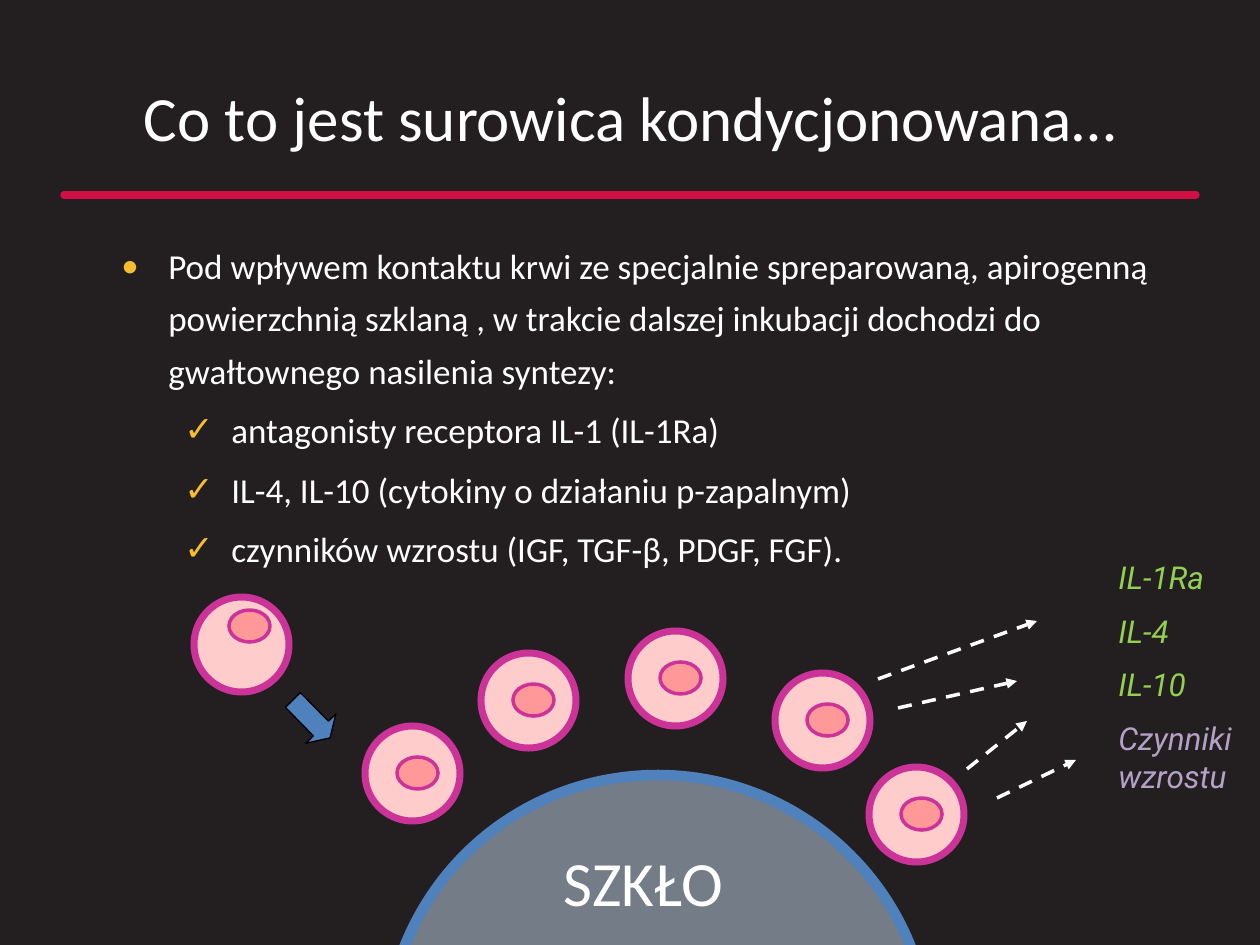
from copy import deepcopy

from lxml.etree import SubElement
from pptx import Presentation
from pptx.dml.color import RGBColor
from pptx.enum.dml import MSO_LINE
from pptx.enum.shapes import MSO_CONNECTOR, MSO_SHAPE
from pptx.enum.text import MSO_ANCHOR, PP_ALIGN
from pptx.oxml.ns import qn
from pptx.util import Emu, Pt

PX_PER_INCH = 126
WHITE, GOLD, GREEN, LILAC = "FFFFFF", "F7BD31", "92D050", "B3A2C7"
BLUE, PINK, ROSE, MAGENTA = "4F81BD", "FFCCCC", "FF9999", "CC3399"


def px(length):
    return Emu(round(length * 914400 / PX_PER_INCH))


def color(value):
    return RGBColor.from_string(value)


class SlideBuilder:
    font = "Calibri"

    def __init__(self, page):
        self.page = page

    def background(self, fill):
        self.page.background.fill.solid()
        self.page.background.fill.fore_color.rgb = color(fill)

    def span(self, para, text, size, ink=WHITE, font=None, italic=None):
        span = para.add_run()
        span.text = text
        span.font.name = font or self.font
        span.font.size = Pt(size)
        span.font.italic = italic
        span.font.color.rgb = color(ink)

    def title(self, text, x, y, width, height):
        box = self.page.shapes.title
        box.left, box.top, box.width, box.height = map(px, (x, y, width, height))
        box.text_frame.vertical_anchor = MSO_ANCHOR.MIDDLE
        para = box.text_frame.paragraphs[0]
        para.alignment = PP_ALIGN.CENTER
        self.span(para, text, 36)

    def text(self, x, y, width, height, lines, gap=0, spacing=None, top=6, **style):
        """Each line is (text, span options, bullet or None)."""
        box = self.page.shapes.add_textbox(*map(px, (x, y, width, height)))
        frame = box.text_frame
        frame.word_wrap = True
        frame.margin_top = px(top)
        for index, (text, options, bullet) in enumerate(lines):
            para = frame.add_paragraph() if index else frame.paragraphs[0]
            if bullet:
                self.bullet(para, *bullet)
            if index and gap:
                para.space_before = Pt(gap)
            if spacing:
                para.line_spacing = spacing
            self.span(para, text, **{**style, **options})

    def bullet(self, para, mark, level, indent):
        para.level = level
        props = para._p.get_or_add_pPr()
        props.set("marL", str(px(indent)))
        props.set("indent", str(-px(47)))
        tint = SubElement(props, qn("a:buClr"))
        SubElement(tint, qn("a:srgbClr"), val=GOLD)
        SubElement(props, qn("a:buFont"), typeface=self.font)
        SubElement(props, qn("a:buChar"), char=mark)

    def paint(self, shape, fill, line, weight):
        shape.shadow.inherit = False
        shape.fill.solid()
        shape.fill.fore_color.rgb = color(fill)
        shape.line.color.rgb = color(line)
        shape.line.width = Pt(weight)
        return shape

    def shape(self, kind, x, y, width, height, fill, line, weight):
        shape = self.page.shapes.add_shape(kind, *map(px, (x, y, width, height)))
        return self.paint(shape, fill, line, weight)

    def cell(self, x, y, nucleus_dx=32, nucleus_dy=31):
        self.shape(MSO_SHAPE.OVAL, x, y, 95, 95, PINK, MAGENTA, 4)
        self.shape(MSO_SHAPE.OVAL, x + nucleus_dx, y + nucleus_dy, 41, 32,
                   ROSE, MAGENTA, 2)

    def sector(self, rim, center, fill, line, weight, opacity):
        """Rim is a start point followed by curve points in threes."""
        corners = [(px(x), px(y)) for x, y in [*rim, center]]
        builder = self.page.shapes.build_freeform(*corners[0], scale=1.0)
        builder.add_line_segments(corners[1:], close=True)
        shape = self.paint(builder.convert_to_shape(), fill, line, weight)
        tint = shape._element.spPr.find(qn("a:solidFill"))[0]
        SubElement(tint, qn("a:alpha"), val=str(opacity * 1000))

        # Bend the rim segments into curves
        area = next(shape._element.iter(qn("a:path")))
        segments = area.findall(qn("a:lnTo"))[:-1]
        for first in range(0, len(segments), 3):
            curve = SubElement(area, qn("a:cubicBezTo"))
            segments[first].addprevious(curve)
            for segment in segments[first:first + 3]:
                curve.append(segment[0])
                area.remove(segment)

        # Stroke the rim only, fill the whole sector
        edge = deepcopy(area)
        for part in (edge.find(qn("a:lnTo")), edge.find(qn("a:close"))):
            edge.remove(part)
        edge.set("fill", "none")
        area.set("stroke", "0")
        area.addprevious(edge)

    def line(self, start, end, ink, weight, arrow=False):
        line = self.page.shapes.add_connector(
            MSO_CONNECTOR.STRAIGHT, *map(px, (*start, *end)))
        line.line.color.rgb = color(ink)
        line.line.width = Pt(weight)
        stroke = line.line._get_or_add_ln()
        if arrow:
            line.line.dash_style = MSO_LINE.DASH
            SubElement(stroke, qn("a:tailEnd"), type="triangle")
        else:
            stroke.set("cap", "rnd")
        SubElement(line._element.spPr, qn("a:effectLst"))


def main():
    deck = Presentation()
    deck.slide_width, deck.slide_height = px(1260), px(945)
    slide = SlideBuilder(deck.slides.add_slide(deck.slide_layouts[5]))
    slide.background("231F20")

    # Heading and rule
    slide.title("Co to jest surowica kondycjonowana…", 63, 38, 1134, 157)
    slide.line((64, 195), (1196, 195), "D30E45", 4.25)

    # Free cell moving towards the glass
    slide.cell(194, 597, 35, 13)
    arrow = slide.shape(MSO_SHAPE.RIGHT_ARROW, 285, 698, 53, 42, BLUE, "000000", 0.75)
    arrow.rotation = 45.6
    arrow.adjustments[1] = 0.31

    # Glass bead
    rim = [(917, 964), (881, 852), (776, 775), (658, 775),
           (543, 775), (442, 845), (402, 953)]
    slide.sector(rim, (658, 1048), "C6D9F1", BLUE, 6, opacity=50)

    # Cells around the glass
    for x, y in [(365, 726), (481, 653), (628, 631), (775, 673), (869, 767)]:
        slide.cell(x, y)

    # Explanation
    check = ("✓", 1, 110)
    slide.text(109, 204, 1096, 407, [
        ("Pod wpływem kontaktu krwi ze specjalnie spreparowaną, apirogenną "
         "powierzchnią szklaną , w trakcie dalszej inkubacji dochodzi do "
         "gwałtownego nasilenia syntezy:", {}, ("•", 0, 47)),
        ("antagonisty receptora IL-1 (IL-1Ra)", {}, check),
        ("IL-4, IL-10 (cytokiny o działaniu p-zapalnym)", {}, check),
        ("czynników wzrostu (IGF, TGF-β, PDGF, FGF).", {}, check),
    ], gap=4, spacing=1.25, top=30, size=20)

    # Released factors
    for start, end in [((878, 679), (1037, 621)), ((898, 708), (1017, 681)),
                       ((967, 769), (1027, 721)), ((997, 798), (1076, 760))]:
        slide.line(start, end, WHITE, 2, arrow=True)
    factors = [(name, {}, None) for name in ("IL-1Ra", "IL-4", "IL-10")]
    factors.append(("Czynniki wzrostu", {"ink": LILAC}, None))
    slide.text(1106, 552, 154, 261, factors, gap=9, size=18,
               ink=GREEN, font="Roboto", italic=True)

    # Glass label
    slide.text(551, 838, 273, 89, [("SZKŁO", {}, None)], size=36)

    deck.save("out.pptx")


if __name__ == "__main__":
    main()
